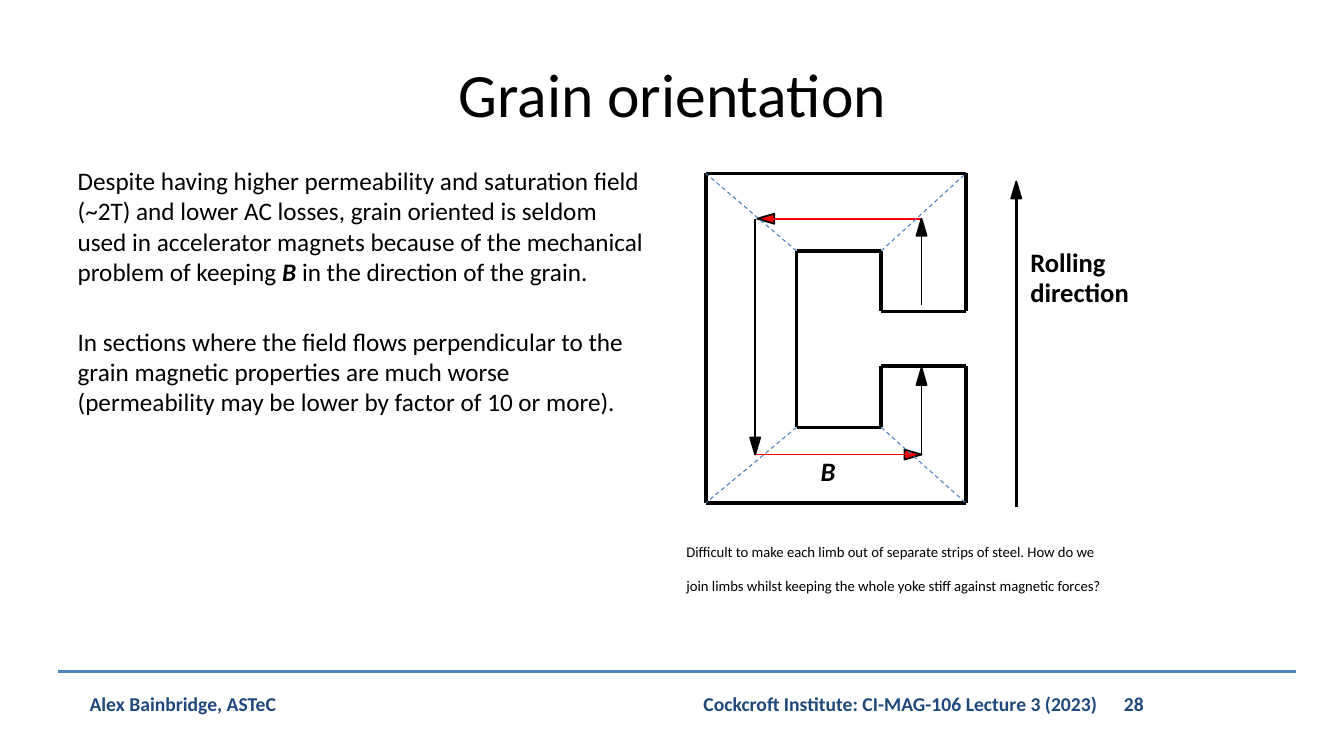
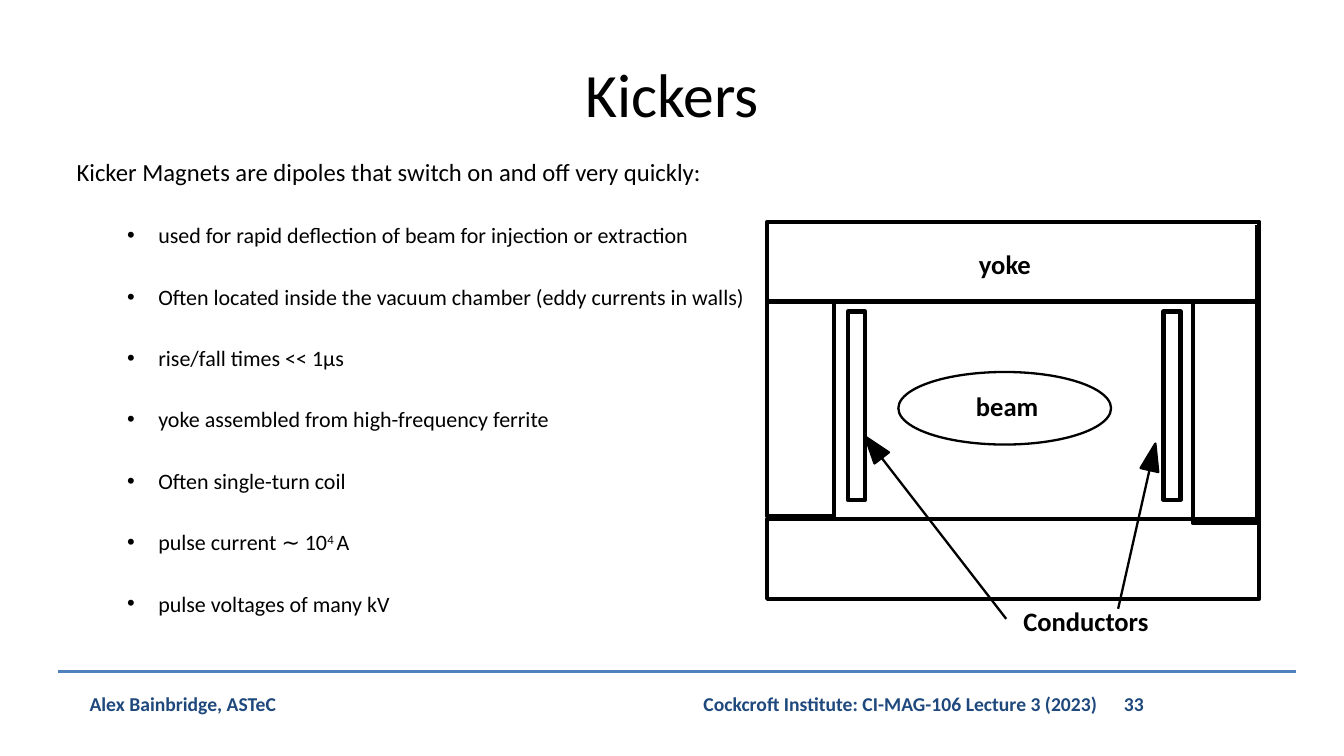
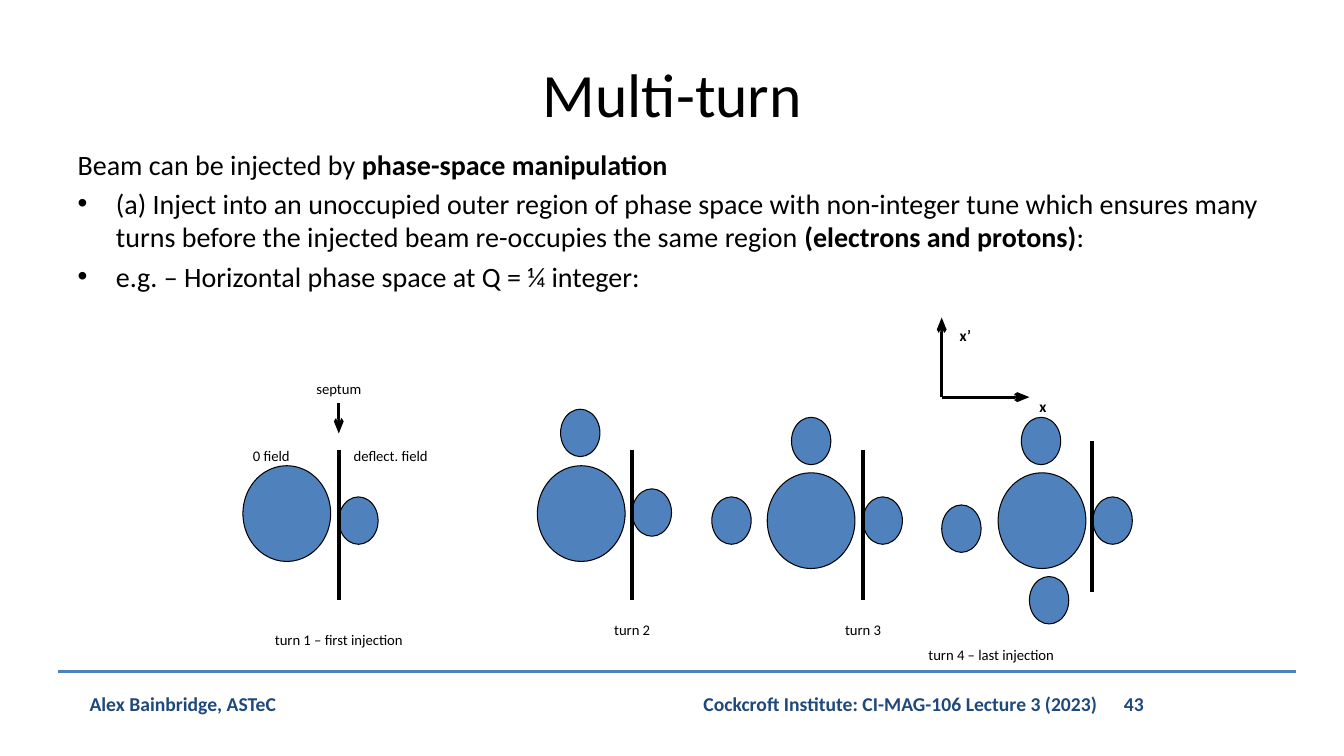
"""Build three lecture slides on magnet steel, kickers and multi-turn injection."""
from itertools import pairwise
from math import hypot

from lxml import etree
from pptx import Presentation
from pptx.dml.color import RGBColor
from pptx.enum.dml import MSO_LINE
from pptx.enum.shapes import MSO_CONNECTOR, MSO_SHAPE
from pptx.enum.text import MSO_ANCHOR, MSO_AUTO_SIZE, PP_ALIGN
from pptx.oxml.ns import qn
from pptx.util import Inches, Pt

RECT, OVAL = MSO_SHAPE.RECTANGLE, MSO_SHAPE.OVAL
LEFT, MID = PP_ALIGN.LEFT, PP_ALIGN.CENTER
TOP, CENTRE = MSO_ANCHOR.TOP, MSO_ANCHOR.MIDDLE
DASH, STRAIGHT, FIXED = MSO_LINE.DASH, MSO_CONNECTOR.STRAIGHT, MSO_AUTO_SIZE.NONE

FONT = "Calibri"
HUES = {"ink": "000000", "navy": "1F497D", "blue": "4F81BD", "dash": "4B7EBC", "red": "FF0000"}
AUTHOR = "Alex Bainbridge, ASTeC"
COURSE = "Cockcroft Institute: CI-MAG-106 Lecture 3 (2023)"

GRAIN = [
    {"runs": [("Despite having higher permeability and saturation field (~2T) and lower AC losses, grain "
               "oriented is seldom used in accelerator magnets because of the mechanical problem of keeping ", ""),
              ("B ", "bi"), ("in the direction of the grain.", "")], "size": 18},
    {"runs": [("In sections where the field flows perpendicular to the grain magnetic properties are much "
               "worse (permeability may be lower by factor of 10 or more).", "")], "size": 18, "gap": 28.5},
]
ISSUE = ("Difficult to make each limb out of separate strips of steel. How do we join limbs whilst "
         "keeping the whole yoke stiff against magnetic forces?")
CORE = [(7, 1.72), (9.58, 1.72), (9.58, 3.09), (8.74, 3.09), (8.74, 2.49), (7.9, 2.49),
        (7.9, 4.24), (8.74, 4.24), (8.74, 3.63), (9.58, 3.63), (9.58, 4.99), (7, 4.99), (7, 1.72)]
JOINTS = [((8.74, 2.49), (9.58, 1.72)), ((7.9, 2.49), (7, 1.72)),
          ((8.74, 4.24), (9.58, 4.99)), ((7.9, 4.24), (7, 4.99))]
FLUX = [((9.14, 2.17), (7.51, 2.17), "red", 1.25), ((7.49, 4.51), (9.14, 4.51), "red", 1.25),
        ((7.49, 2.17), (7.49, 4.51), "ink", 1.25), ((9.14, 4.51), (9.14, 3.65), "ink", 1.25),
        ((9.14, 3.03), (9.14, 2.17), "ink", 1.25), ((10.08, 5.03), (10.08, 1.8), "ink", 2.5)]
GRAIN_TAGS = [("B", 8.14, 4.51, "bi"), ("Rolling", 10.22, 2.44, "b"), ("direction", 10.22, 2.74, "b")]

FACTS = [
    [("used for rapid deflection of beam for injection or extraction", "")],
    [("Often located inside the vacuum chamber (eddy currents in walls)", "")],
    [("rise/fall times << 1µs", "")],
    [("yoke assembled from high-frequency ferrite", "")],
    [("Often single-turn coil", "")],
    [("pulse current ∼ 10", ""), ("4 ", "^"), ("A", "")],
    [("pulse voltages of many kV", "")],
]
KICKER = [{"runs": [("Kicker Magnets are dipoles that switch on and off very quickly:", "")], "size": 17.6}]
KICKER += [{"runs": fact, "size": 15.7, "gap": 25, "level": 1, "left": 0.81, "hang": 0.31} for fact in FACTS]
BLOCKS = [(7.61, 5.15, 4.88, 0.79), (7.61, 2.2, 4.88, 0.79), (7.61, 2.99, 0.66, 2.13),
          (11.83, 2.99, 0.66, 2.2), (8.41, 3.09, 0.17, 1.87), (11.54, 3.09, 0.17, 1.87)]
KICK_TAGS = [("beam", 9.68, 3.87, "b"), ("Conductors", 10.15, 6, "b"), ("yoke", 9.71, 2.46, "b")]
LEADS = [((9.98, 6.14), (8.58, 4.33)), ((11.09, 6.04), (11.46, 4.4))]

TURNS = [
    {"runs": [("Beam can be injected by ", ""), ("phase-space manipulation", "b")], "size": 20},
    {"runs": [("(a) Inject into an unoccupied outer region of phase space with non-integer tune which ensures "
               "many turns before the injected beam re-occupies the same region ", ""),
              ("(electrons and protons)", "b"), (":", "")], "size": 20, "gap": 4, "left": 0.38, "hang": 0.38},
    {"runs": [("e.g. – Horizontal phase space at Q = ¼ integer:", "")],
     "size": 20, "gap": 4, "left": 0.38, "hang": 0.38},
]
STORED, PULSE = (0.87, 0.95), (0.39, 0.47)
BEAMS = [
    {"core": (2.41, 4.62), "dots": [(3.36, 4.93)], "wall": (3.36, 4.46)},
    {"core": (5.33, 4.62), "dots": [(6.27, 4.85), (5.56, 4.06)], "wall": (6.27, 4.46)},
    {"core": (7.61, 4.69), "dots": [(8.56, 4.93), (7.85, 4.14), (7.06, 4.93)], "wall": (8.56, 4.46)},
    {"core": (9.9, 4.69), "dots": [(10.13, 4.14), (9.34, 5.01), (10.21, 5.72), (10.84, 4.93)],
     "wall": (10.83, 4.38)},
]
NOTES = [
    ("turn 1 – first injection", (2.02, 6.04, 2.68, 0.4), MID),
    ("turn 2", (5.68, 5.95, 1.18, 0.4), MID),
    ("turn 3", (8.05, 5.95, 1.02, 0.4), MID),
    ("turn 4 – last injection", (9.11, 6.19, 2.56, 0.4), LEFT),
    ("septum", (2.77, 3.56, 1.18, 0.4), MID),
    ("0 field\tdeflect. field", (2.41, 4.22, 2.52, 0.4), LEFT, "", 1),
    ("x", (10.21, 3.7, 0.71, 0.43), LEFT, "b"),
    ("x’", (9.42, 2.99, 0.63, 0.43), LEFT, "b"),
]
AXES = [((9.34, 3.94), (9.34, 3.15)), ((9.34, 3.94), (10.21, 3.94)), ((3.36, 4), (3.36, 4.3))]


def hue(name):
    return RGBColor.from_string(HUES[name])


def inch(*nums):
    return [Inches(num) for num in nums]


def add_runs(para, runs, size, color="ink"):
    for text, style in runs:
        run = para.add_run()
        run.text = text
        font = run.font
        font.name, font.size, font.color.rgb = FONT, Pt(size), hue(color)
        font.bold, font.italic = "b" in style, "i" in style
        if "^" in style:
            run._r.get_or_add_rPr().set("baseline", "30000")


def set_frame(frame, anchor=TOP, wrap=True):
    frame.word_wrap, frame.auto_size, frame.vertical_anchor = wrap, FIXED, anchor


def place(shape, box):
    shape.left, shape.top, shape.width, shape.height = inch(*box)


def add_text(slide, text, box, size, style="", align=LEFT, color="ink", pitch=None, tab=None):
    frame = slide.shapes.add_textbox(*inch(*box)).text_frame
    set_frame(frame)
    para = frame.paragraphs[0]
    para.alignment = align
    if pitch:
        para.line_spacing = Pt(pitch)
    if tab:
        stops = etree.SubElement(para._p.get_or_add_pPr(), qn("a:tabLst"))
        etree.SubElement(stops, qn("a:tab"), pos=str(Inches(tab)), algn="l")
    add_runs(para, [(text, style)], size, color)
    return frame


def add_tag(slide, text, left, top, style):
    frame = add_text(slide, text, (left, top, 1.2, 0.32), 19, style)
    frame.word_wrap = False
    frame.margin_left = frame.margin_right = frame.margin_top = frame.margin_bottom = 0


def add_note(slide, text, box, align, style="", tab=None):
    size, pitch = (11, 27) if style else (10.5, 24.4)
    add_text(slide, text, box, size, style, align, pitch=pitch, tab=tab)


def add_line(slide, start, end, color="ink", width=2.5, dash=None, head=False):
    line = slide.shapes.add_connector(STRAIGHT, *inch(*start, *end))
    line.line.color.rgb, line.line.width = hue(color), Pt(width)
    if dash:
        line.line.dash_style = dash
    if head:
        etree.SubElement(line.line._get_or_add_ln(), qn("a:tailEnd"), type="arrow", w="med", len="lg")
    etree.SubElement(line._element.spPr, qn("a:effectLst"))


def paint(shape, fill, width):
    shape.shadow.inherit = False
    if fill:
        shape.fill.solid()
        shape.fill.fore_color.rgb = hue(fill)
    else:
        shape.fill.background()
    shape.line.color.rgb, shape.line.width = hue("ink"), Pt(width)


def add_block(slide, kind, box, fill=None, width=0.75):
    paint(slide.shapes.add_shape(kind, *inch(*box)), fill, width)


def add_arrow(slide, start, tip, color="ink", width=1.25, size=0.17, half=0.05, edge=1.25):
    span = hypot(tip[0] - start[0], tip[1] - start[1])
    dx, dy = (tip[0] - start[0]) / span, (tip[1] - start[1]) / span
    base = tip[0] - size * dx, tip[1] - size * dy
    wings = [inch(base[0] + side * dy, base[1] - side * dx) for side in (half, -half)]
    path = slide.shapes.build_freeform(*inch(*tip), scale=1.0)
    path.add_line_segments(wings, close=True)
    paint(path.convert_to_shape(), color, edge)
    add_line(slide, start, (tip[0] - 0.85 * size * dx, tip[1] - 0.85 * size * dy), color, width)


def fill_body(body, box, items):
    place(body, box)
    frame = body.text_frame
    set_frame(frame)
    for num, item in enumerate(items):
        para = frame.add_paragraph() if num else frame.paragraphs[0]
        para.level, para.alignment = item.get("level", 0), LEFT
        para.space_before = Pt(item.get("gap", 0))
        hang = item.get("hang", 0)
        props = para._p.get_or_add_pPr()
        props.set("marL", str(Inches(item.get("left", 0))))
        props.set("indent", str(-Inches(hang)))
        if hang:
            etree.SubElement(props, qn("a:buFont"), typeface="Arial")
            etree.SubElement(props, qn("a:buChar"), char="•")
        else:
            etree.SubElement(props, qn("a:buNone"))
        add_runs(para, item["runs"], item["size"])


def add_page(deck, title, number, box, items):
    slide = deck.slides.add_slide(deck.slide_layouts[1])
    head = slide.shapes.title
    place(head, (0.67, 0.3, 12, 1.25))
    set_frame(head.text_frame, CENTRE)
    para = head.text_frame.paragraphs[0]
    para.alignment = MID
    add_runs(para, [(title, "")], 44)
    fill_body(slide.placeholders[1], box, items)
    add_line(slide, (0.58, 6.66), (12.85, 6.66), "blue", 2)
    add_text(slide, AUTHOR, (0.79, 6.82, 5.14, 0.34), 14, "b", color="navy")
    add_text(slide, f"{COURSE}\t{number}", (5.47, 6.82, 7.38, 0.34), 14, "b", MID, "navy", tab=4.17)
    return slide


def draw_grain(deck):
    slide = add_page(deck, "Grain orientation", 28, (0.67, 1.59, 5.84, 4.95), GRAIN)
    for start, end in pairwise(CORE):
        add_line(slide, start, end)
    for flux in FLUX:
        add_arrow(slide, *flux)
    for tag in GRAIN_TAGS:
        add_tag(slide, *tag)
    add_note(slide, ISSUE, (6.71, 5.17, 4.33, 1.31), LEFT)
    for start, end in JOINTS:
        add_line(slide, start, end, "dash", 0.75, DASH)


def draw_kicker(deck):
    slide = add_page(deck, "Kickers", 33, (0.66, 1.51, 6.95, 4.95), KICKER)
    add_line(slide, (12.46, 2.23), (12.46, 5.16))
    for box in BLOCKS:
        add_block(slide, RECT, box, width=3.13)
    add_block(slide, OVAL, (8.91, 3.69, 2.11, 0.72), width=1.63)
    for tag in KICK_TAGS:
        add_tag(slide, *tag)
    for start, tip in LEADS:
        add_arrow(slide, start, tip, width=1.63, size=0.27, half=0.09, edge=1.63)


def draw_turns(deck):
    slide = add_page(deck, "Multi-turn", 43, (0.67, 1.41, 12, 4.95), TURNS)
    for beam in BEAMS:
        add_block(slide, OVAL, beam["core"] + STORED, "blue")
        for dot in beam["dots"]:
            add_block(slide, OVAL, dot + PULSE, "blue")
        left, top = beam["wall"]
        add_line(slide, (left, top), (left, top + 1.49), width=3)
    for start, end in AXES:
        add_line(slide, start, end, width=2, head=True)
    for note in NOTES:
        add_note(slide, *note)


def main():
    deck = Presentation()
    deck.slide_width, deck.slide_height = inch(13.33, 7.5)
    draw_grain(deck)
    draw_kicker(deck)
    draw_turns(deck)
    deck.save("out.pptx")


if __name__ == "__main__":
    main()
